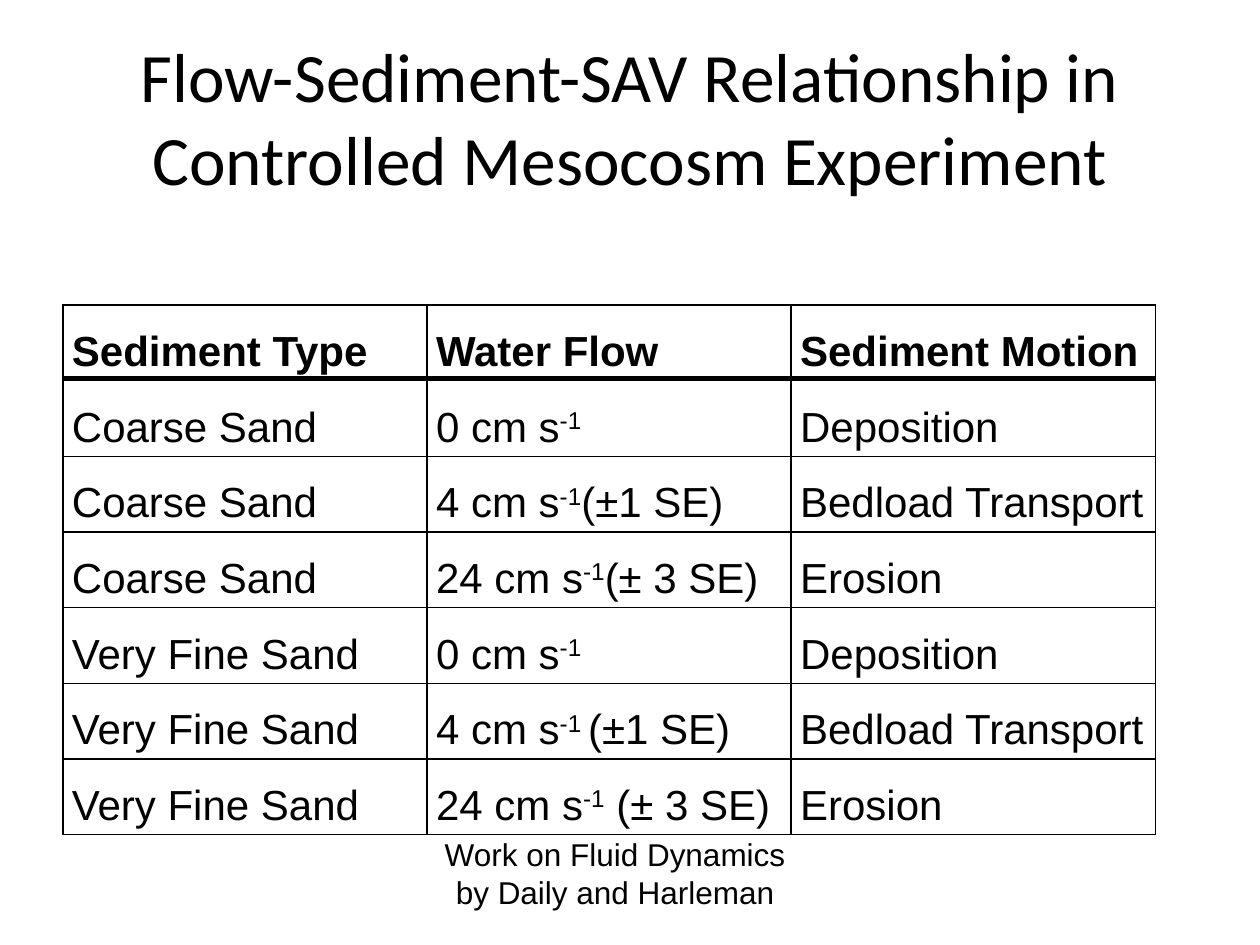
from lxml.etree import SubElement
from pptx import Presentation
from pptx.dml.color import RGBColor
from pptx.enum.shapes import MSO_CONNECTOR
from pptx.enum.text import MSO_ANCHOR, PP_ALIGN
from pptx.oxml import parse_xml
from pptx.oxml.ns import nsdecls, qn
from pptx.util import Cm, Pt

BLACK = RGBColor(0, 0, 0)
TABLE_LEFT, TABLE_TOP = 1.27, 6.15
COLUMN_WIDTH, ROW_HEIGHT = 7.34, 1.42
RULE_Y = 7.62
ROWS = [
    ("Sediment Type", "Water Flow", "Sediment Motion"),
    ("Coarse Sand", "0 cm s^-1^", "Deposition"),
    ("Coarse Sand", "4 cm s^-1^(±1 SE)", "Bedload Transport"),
    ("Coarse Sand", "24 cm s^-1^(± 3 SE)", "Erosion"),
    ("Very Fine Sand", "0 cm s^-1^", "Deposition"),
    ("Very Fine Sand", "4 cm s^-1 ^(±1 SE)", "Bedload Transport"),
    ("Very Fine Sand", "24 cm s^-1^ (± 3 SE)", "Erosion"),
]


def write_text(frame, text, size, font="Arial", bold=False, align=PP_ALIGN.LEFT, spacing=1.0):
    """Write one paragraph, raising the parts enclosed in carets."""
    paragraph = frame.paragraphs[0]
    paragraph.alignment = align
    paragraph.line_spacing = spacing
    for index, part in enumerate(text.split("^")):
        if not part:
            continue
        run = paragraph.add_run()
        run.text = part
        run.font.size = Pt(size)
        run.font.name = font
        run.font.bold = bold
        run.font.color.rgb = BLACK
        if index % 2:
            run._r.get_or_add_rPr().set("baseline", "30000")


def add_centred_text(slide, left, top, width, height, text, size, font="Arial", anchor=MSO_ANCHOR.TOP):
    """Add a wrapping text box with centred text."""
    frame = slide.shapes.add_textbox(Cm(left), Cm(top), Cm(width), Cm(height)).text_frame
    frame.word_wrap = True
    frame.vertical_anchor = anchor
    write_text(frame, text, size, font=font, align=PP_ALIGN.CENTER)


def set_borders(cell):
    """Draw a thin black border on every side of a cell."""
    properties = cell._tc.get_or_add_tcPr()
    for index, side in enumerate("LRTB"):
        border = parse_xml(
            f'<a:ln{side} {nsdecls("a")} w="{Pt(1)}"><a:solidFill>'
            f'<a:srgbClr val="{BLACK}"/></a:solidFill></a:ln{side}>'
        )
        properties.insert(index, border)


def add_sediment_table(slide):
    """Add the table of sediment, flow and motion."""
    columns = len(ROWS[0])
    table = slide.shapes.add_table(
        len(ROWS), columns, Cm(TABLE_LEFT), Cm(TABLE_TOP),
        Cm(COLUMN_WIDTH * columns), Cm(ROW_HEIGHT * len(ROWS)),
    ).table
    table.first_row = table.horz_banding = False
    for column in table.columns:
        column.width = Cm(COLUMN_WIDTH)
    for row_index, (row, texts) in enumerate(zip(table.rows, ROWS)):
        row.height = Cm(ROW_HEIGHT)
        for cell, text in zip(row.cells, texts):
            cell.margin_left = cell.margin_right = Cm(0.18)
            cell.margin_top = cell.margin_bottom = 0
            cell.fill.background()
            set_borders(cell)
            write_text(cell.text_frame, text, 24, bold=row_index == 0, spacing=1.5)


def add_header_rule(slide):
    """Add the heavy rule under the table header."""
    right = TABLE_LEFT + COLUMN_WIDTH * len(ROWS[0])
    rule = slide.shapes.add_connector(
        MSO_CONNECTOR.STRAIGHT, Cm(TABLE_LEFT), Cm(RULE_Y), Cm(right), Cm(RULE_Y)
    )
    rule.line.color.rgb = BLACK
    rule.line.width = Pt(2)
    SubElement(rule._element.spPr, qn("a:effectLst"))


def main():
    """Build and save the slide."""
    presentation = Presentation()
    presentation.slide_width, presentation.slide_height = Cm(25.4), Cm(19.05)
    slide = presentation.slides.add_slide(presentation.slide_layouts[6])
    add_centred_text(
        slide, 1.27, 0.76, 22.86, 3.18,
        "Flow-Sediment-SAV Relationship in Controlled Mesocosm Experiment",
        39.6, font="Calibri", anchor=MSO_ANCHOR.MIDDLE,
    )
    add_sediment_table(slide)
    add_header_rule(slide)
    add_centred_text(
        slide, 8.69, 16.71, 7.42, 1.8, "Work on Fluid Dynamics by Daily and Harleman", 18
    )
    presentation.save("out.pptx")


if __name__ == "__main__":
    main()
